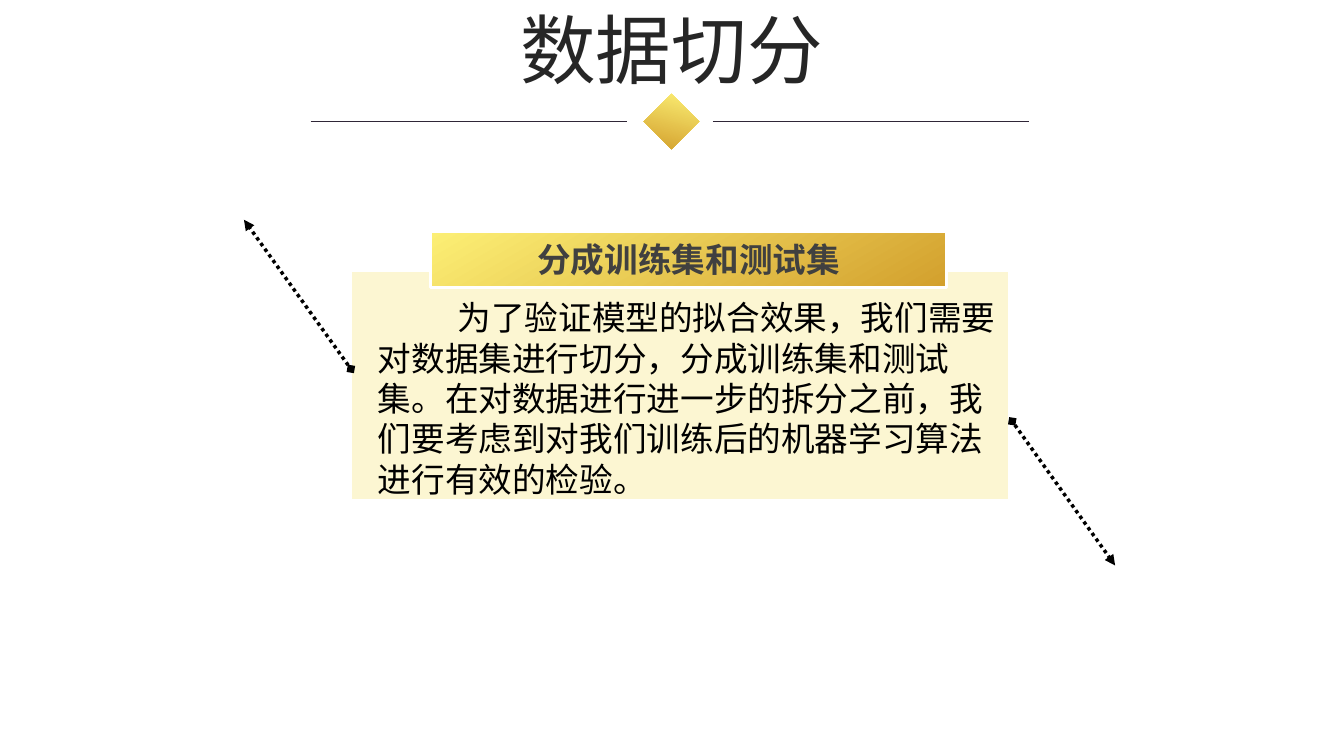
from dataclasses import dataclass

from lxml import etree
from pptx import Presentation
from pptx.dml.color import RGBColor
from pptx.enum.dml import MSO_LINE
from pptx.enum.shapes import MSO_CONNECTOR, MSO_SHAPE
from pptx.enum.text import MSO_ANCHOR, MSO_AUTO_SIZE, PP_ALIGN
from pptx.oxml.ns import qn
from pptx.util import Inches, Pt

DOTTED = MSO_LINE.ROUND_DOT
STRAIGHT = MSO_CONNECTOR.STRAIGHT
ROUNDED, HEXAGON, RECT = MSO_SHAPE.ROUNDED_RECTANGLE, MSO_SHAPE.HEXAGON, MSO_SHAPE.RECTANGLE
TOP, MIDDLE = MSO_ANCHOR.TOP, MSO_ANCHOR.MIDDLE
GROW, FIXED = MSO_AUTO_SIZE.SHAPE_TO_FIT_TEXT, MSO_AUTO_SIZE.NONE
LEFT, CENTER = PP_ALIGN.LEFT, PP_ALIGN.CENTER


@dataclass(frozen=True)
class Theme:
    font: str = "Noto Sans CJK SC"
    title_size: int = 54
    text_size: int = 24
    title: str = "262626"
    heading: str = "404040"
    ink: str = "000000"
    rule: str = "2F2637"
    white: str = "FFFFFF"
    card: str = "F6E36A"
    gold: tuple = ("FCEF75", "D3A02D")


THEME = Theme()


def rgb(value):
    return RGBColor.from_string(value)


def add_text(tf, text, size, color, align, bold=False):
    p = tf.paragraphs[0]
    p.alignment = align
    r = p.add_run()
    r.text = text
    r.font.name = THEME.font
    r.font.size = Pt(size)
    r.font.bold = bold
    r.font.color.rgb = rgb(color)
    ea = etree.SubElement(r.font._element, qn("a:ea"))
    ea.set("typeface", THEME.font)
    return p


def add_block(s, kind, x, y, w, h, outlined=True):
    sp = s.shapes.add_shape(kind, Inches(x), Inches(y), Inches(w), Inches(h))
    sp.shadow.inherit = False
    if outlined:
        sp.line.color.rgb = rgb(THEME.white)
        sp.line.width = Pt(2)
    else:
        sp.line.fill.background()
    return sp


def fill_gold(sp):
    sp.fill.gradient()
    sp.fill.gradient_angle = 300
    for stop, position, color in zip(sp.fill.gradient_stops, (0, 1), THEME.gold):
        stop.position = position
        stop.color.rgb = rgb(color)


def add_line(s, x1, y1, x2, y2, color, width):
    line = s.shapes.add_connector(STRAIGHT, Inches(x1), Inches(y1), Inches(x2), Inches(y2))
    line.line.color.rgb = rgb(color)
    line.line.width = Pt(width)
    etree.SubElement(line._element.spPr, qn("a:effectLst"))
    return line


def add_header(s, x, y, w, text):
    title = s.shapes.title
    title_w, center = 3.23, x + 3.58
    title.left, title.top = Inches(center - title_w / 2), Inches(y)
    title.width, title.height = Inches(title_w), Inches(1.01)
    tf = title.text_frame
    tf.word_wrap = False
    tf.auto_size = GROW
    tf.vertical_anchor = TOP
    add_text(tf, text, THEME.title_size, THEME.title, CENTER)

    rule_y, rule_w, side = y + 1.22, 3.14, 0.39
    for start in (x, x + w - rule_w):
        add_line(s, start, rule_y, start + rule_w, rule_y, THEME.rule, 0.5)
    diamond = add_block(s, RECT, center - side / 2, y + 1.03, side, side, False)
    diamond.rotation = 45
    fill_gold(diamond)


def add_card(s, x, y, w, h, heading, text):
    card = add_block(s, ROUNDED, x, y, w, h)
    card.adjustments[0] = 0
    card.fill.solid()
    card.fill.fore_color.rgb = rgb(THEME.card)
    color = card._element.spPr.find(qn("a:solidFill"))[0]
    etree.SubElement(color, qn("a:alpha")).set("val", "30000")

    body = s.shapes.add_textbox(Inches(x + 0.17), Inches(y + 0.22), Inches(6.35), Inches(2.12))
    tf = body.text_frame
    tf.word_wrap = True
    tf.auto_size = GROW
    p = add_text(tf, text, THEME.text_size, THEME.ink, LEFT)
    pPr = p._p.get_or_add_pPr()
    pPr.set("marL", "0")
    pPr.set("indent", str(Inches(0.79)))
    pPr.set("hangingPunct", "0")

    banner = add_block(s, HEXAGON, x + 0.79, y - 0.38, 5.12, 0.55)
    banner.adjustments[0] = 0
    fill_gold(banner)
    tf = banner.text_frame
    tf.word_wrap = False
    tf.auto_size = FIXED
    tf.vertical_anchor = MIDDLE
    add_text(tf, heading, THEME.text_size, THEME.heading, CENTER, True)


def add_pointers(s, x, y, w):
    right = x + w + 0.03
    for x1, y1, dx, dy in ((x, y + 0.98, -1.06, -1.48), (right, y + 1.5, 1.02, 1.43)):
        arrow = add_line(s, x1, y1, x1 + dx, y1 + dy, THEME.ink, 2.5)
        arrow.line.dash_style = DOTTED
        ln = arrow.line._get_or_add_ln()
        for tag, end in (("a:headEnd", "diamond"), ("a:tailEnd", "triangle")):
            etree.SubElement(ln, qn(tag)).set("type", end)


def main():
    prs = Presentation()
    prs.slide_width, prs.slide_height = Inches(13.33), Inches(7.5)
    s = prs.slides.add_slide(prs.slide_layouts[5])
    add_header(s, 3.08, -0.02, 7.13, "数据切分")
    add_card(
        s, 3.48, 2.68, 6.53, 2.28,
        "分成训练集和测试集",
        "为了验证模型的拟合效果，我们需要对数据集进行切分，分成训练集和测试集。"
        "在对数据进行进一步的拆分之前，我们要考虑到对我们训练后的机器学习算法进行有效的检验。",
    )
    add_pointers(s, 3.48, 2.68, 6.53)
    prs.save("out.pptx")


if __name__ == "__main__":
    main()
